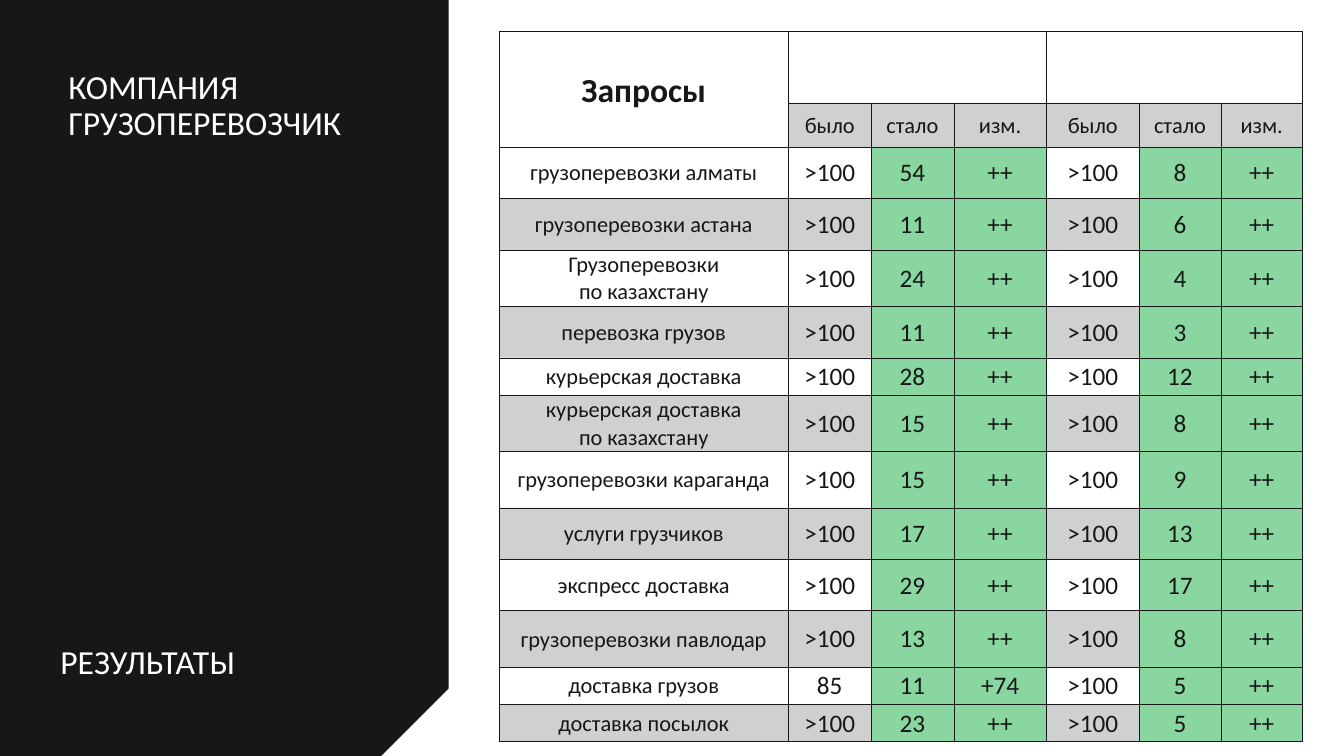
import pptx
import pptx.dml.color
import pptx.enum.text
import pptx.oxml.ns
import pptx.util
from lxml import etree

Inches = pptx.util.Inches
Pt = pptx.util.Pt
ALIGN = pptx.enum.text.PP_ALIGN
ANCHOR = pptx.enum.text.MSO_ANCHOR

COLORS = {"dark": "171717", "white": "FFFFFF", "green": "8AD6A0"}
FONT = "Calibri"

COLUMN_WIDTHS = [2.87, 0.82, 0.82, 0.92, 0.92, 0.81, 0.81]
HEADER_HEIGHTS = [0.71, 0.44]
SUBHEADERS = ["было", "стало", "изм."]
# Row height, query, then before / after / change for both groups
RESULTS = [
    (0.51, "грузоперевозки алматы", ">100", "54", "++", ">100", "8", "++"),
    (0.51, "грузоперевозки астана", ">100", "11", "++", ">100", "6", "++"),
    (0.56, "Грузоперевозки\vпо казахстану", ">100", "24", "++", ">100", "4", "++"),
    (0.51, "перевозка грузов", ">100", "11", "++", ">100", "3", "++"),
    (0.37, "курьерская доставка", ">100", "28", "++", ">100", "12", "++"),
    (0.56, "курьерская доставка\vпо казахстану", ">100", "15", "++", ">100", "8", "++"),
    (0.56, "грузоперевозки караганда", ">100", "15", "++", ">100", "9", "++"),
    (0.51, "услуги грузчиков", ">100", "17", "++", ">100", "13", "++"),
    (0.51, "экспресс доставка", ">100", "29", "++", ">100", "17", "++"),
    (0.56, "грузоперевозки павлодар", ">100", "13", "++", ">100", "8", "++"),
    (0.37, "доставка грузов", "85", "11", "+74", ">100", "5", "++"),
    (0.37, "доставка посылок", ">100", "23", "++", ">100", "5", "++"),
]


def color(name):
    return pptx.dml.color.RGBColor.from_string(COLORS[name])


def write_text(frame, text, size=24, color_name="dark", bold=False,
               align=ALIGN.LEFT, line_spacing=None, space_after=None):
    frame.text = text
    paragraph = frame.paragraphs[0]
    paragraph.alignment = align
    paragraph.line_spacing = line_spacing
    paragraph.space_after = space_after
    for run in paragraph.runs:
        run.font.name = FONT
        run.font.size = Pt(size)
        run.font.bold = bold
        run.font.color.rgb = color(color_name)


def add_label(slide, text, left, top, width, height):
    box = slide.shapes.add_textbox(Inches(left), Inches(top), Inches(width), Inches(height))
    box.text_frame.word_wrap = True
    write_text(box.text_frame, text, color_name="white", line_spacing=0.9)


def add_panel(slide, left, top, width, height):
    # Dark panel with the lower right corner cut off
    cut = 0.67
    right, bottom = left + width, top + height
    points = [(right, top), (right, bottom - cut), (right - cut, bottom), (left, bottom)]
    builder = slide.shapes.build_freeform(Inches(left), Inches(top), scale=1.0)
    builder.add_line_segments([(Inches(x), Inches(y)) for x, y in points], close=True)
    panel = builder.convert_to_shape()
    panel.shadow.inherit = False
    panel.fill.solid()
    panel.fill.fore_color.rgb = color("dark")
    panel.line.fill.background()

    # Panel captions
    add_label(slide, "КОМПАНИЯ ГРУЗОПЕРЕВОЗЧИК", left + 0.58, top + 0.65, 3.55, 1.36)
    add_label(slide, "РЕЗУЛЬТАТЫ", left + 0.5, top + 6.35, 4.13, 0.98)


def add_borders(cell):
    properties = cell._tc.get_or_add_tcPr()
    for side in ("a:lnL", "a:lnR", "a:lnT", "a:lnB"):
        line = etree.SubElement(properties, pptx.oxml.ns.qn(side), w=str(Pt(0.25)))
        fill = etree.SubElement(line, pptx.oxml.ns.qn("a:solidFill"))
        etree.SubElement(fill, pptx.oxml.ns.qn("a:srgbClr"), val=COLORS["dark"])


def style_cell(cell, fill_name=None, opacity=100, side_margin=0.01, top_margin=0.01):
    cell.margin_left = cell.margin_right = Inches(side_margin)
    cell.margin_top, cell.margin_bottom = Inches(top_margin), 0
    cell.vertical_anchor = ANCHOR.MIDDLE
    add_borders(cell)
    if fill_name is None:
        cell.fill.background()
        return
    cell.fill.solid()
    cell.fill.fore_color.rgb = color(fill_name)
    if opacity < 100:
        tint = cell._tc.tcPr.find(".//" + pptx.oxml.ns.qn("a:solidFill") + "[last()]")
        tint = cell._tc.tcPr.findall(pptx.oxml.ns.qn("a:solidFill"))[0]
        etree.SubElement(tint[0], pptx.oxml.ns.qn("a:alpha"), val=str(opacity * 1000))


def fill_header(table):
    header = {"align": ALIGN.CENTER, "line_spacing": 1.07, "space_after": Pt(8)}
    for column in range(len(COLUMN_WIDTHS)):
        style_cell(table.cell(0, column), side_margin=0.07, top_margin=0)
        subheader = table.cell(1, column)
        if column == 0:
            style_cell(subheader, side_margin=0.07, top_margin=0)
        else:
            style_cell(subheader, "dark", opacity=20, side_margin=0.07, top_margin=0)
            write_text(subheader.text_frame, SUBHEADERS[(column - 1) % 3], size=16, **header)
    write_text(table.cell(0, 0).text_frame, "Запросы", bold=True, **header)
    table.cell(0, 0).merge(table.cell(1, 0))
    for first in (1, 4):
        table.cell(0, first).merge(table.cell(0, first + 2))


def fill_results(table):
    for index, (_, *values) in enumerate(RESULTS):
        for column, value in enumerate(values):
            cell = table.cell(index + len(HEADER_HEIGHTS), column)
            if column % 3 != 1 and column > 0:
                style_cell(cell, "green")
            elif index % 2:
                style_cell(cell, "dark", opacity=20)
            else:
                style_cell(cell)
            write_text(cell.text_frame, value, size=18 if column else 16, align=ALIGN.CENTER)


def add_results_table(slide, left, top):
    heights = HEADER_HEIGHTS + [result[0] for result in RESULTS]
    frame = slide.shapes.add_table(len(heights), len(COLUMN_WIDTHS), Inches(left), Inches(top),
                                   Inches(sum(COLUMN_WIDTHS)), Inches(sum(heights)))
    table = frame.table
    table.first_row = table.horz_banding = False
    for column, width in zip(table.columns, COLUMN_WIDTHS):
        column.width = Inches(width)
    for row, height in zip(table.rows, heights):
        row.height = Inches(height)
    fill_header(table)
    fill_results(table)


def main():
    presentation = pptx.Presentation()
    presentation.slide_width = Inches(13.33)
    presentation.slide_height = Inches(7.5)
    slide = presentation.slides.add_slide(presentation.slide_layouts[6])
    add_panel(slide, 0, 0, 4.45, 7.5)
    add_results_table(slide, 4.95, 0.31)
    presentation.save("out.pptx")


if __name__ == "__main__":
    main()
